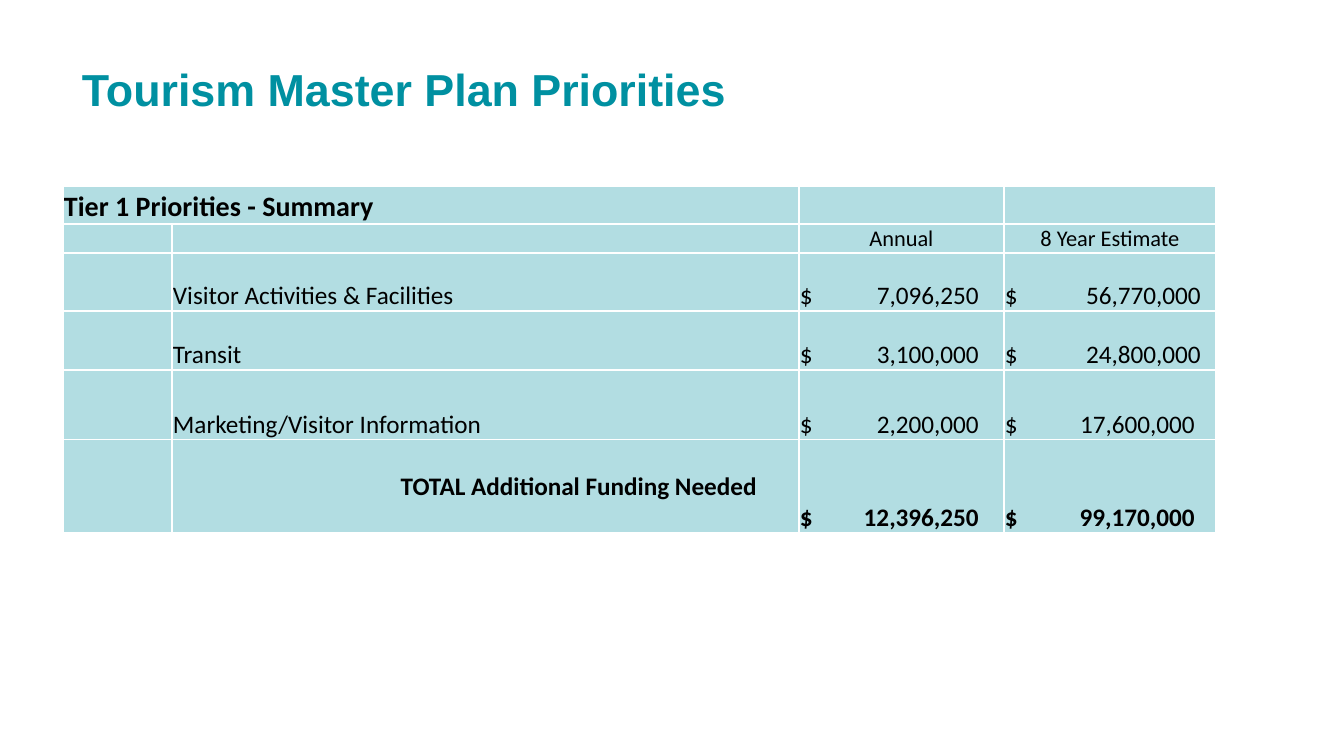
from lxml import etree
from pptx import Presentation
from pptx.dml.color import RGBColor
from pptx.enum.text import MSO_ANCHOR, PP_ALIGN
from pptx.oxml.ns import qn
from pptx.util import Pt

# Content
TITLE = "Tourism Master Plan Priorities"
SUMMARY = "Tier 1 Priorities - Summary"
HEADINGS = ["Annual", "8 Year Estimate"]
# label, annual amount, eight-year amount, right edge of the last amount in px
PRIORITIES = [
    ("Visitor Activities & Facilities", "7,096,250", "56,770,000", 196),
    ("Transit", "3,100,000", "24,800,000", 196),
    ("Marketing/Visitor Information", "2,200,000", "17,600,000", 190),
    ("TOTAL Additional Funding Needed", "12,396,250", "99,170,000", 190),
]

# Layout in px
PX = 9071  # EMU in one px
COLUMNS = [109, 627, 205, 212]
ROWS = [38, 29, 58, 59, 70, 93]
TABLE_LEFT, TABLE_TOP = 63, 186
ANNUAL_EDGE = 179
TOTAL_RIGHT, TOTAL_BOTTOM = 42, 31

TEAL = RGBColor(0x00, 0x90, 0xA1)
BLACK = RGBColor(0x00, 0x00, 0x00)
WHITE = RGBColor(0xFF, 0xFF, 0xFF)
LEFT, CENTER, RIGHT = PP_ALIGN.LEFT, PP_ALIGN.CENTER, PP_ALIGN.RIGHT
BOTTOM, MIDDLE = MSO_ANCHOR.BOTTOM, MSO_ANCHOR.MIDDLE


def write(frame, text, size=18, bold=False, color=BLACK, font="Calibri",
          align=LEFT, tab=None):
    """Put one formatted paragraph in a frame, with an optional right tab."""
    para = frame.paragraphs[0]
    para.alignment = align
    if tab:
        tabs = etree.SubElement(para._p.get_or_add_pPr(), qn("a:tabLst"))
        etree.SubElement(tabs, qn("a:tab"), pos=str(tab * PX), algn="r")
    span = para.add_run()
    span.text = text
    span.font.name = font
    span.font.size = Pt(size)
    span.font.bold = bold
    span.font.color.rgb = color
    return para


def style_cell(cell):
    """Give a cell thin white borders, a tinted fill and narrow margins."""
    cell.vertical_anchor = BOTTOM
    cell.margin_left = cell.margin_right = cell.margin_top = PX
    cell.margin_bottom = 0
    properties = cell._tc.get_or_add_tcPr()
    for side in ("a:lnL", "a:lnR", "a:lnT", "a:lnB"):
        line = etree.SubElement(properties, qn(side), w=str(Pt(1)))
        solid = etree.SubElement(line, qn("a:solidFill"))
        etree.SubElement(solid, qn("a:srgbClr"), val=str(WHITE))
    cell.fill.solid()
    cell.fill.fore_color.rgb = TEAL
    tint = properties.find(qn("a:solidFill")).find(qn("a:srgbClr"))
    etree.SubElement(tint, qn("a:alpha"), val="30000")
    # Small type in empty cells keeps the heading row low
    etree.SubElement(cell.text_frame.paragraphs[0]._p, qn("a:endParaRPr"), sz="1600")


deck = Presentation()
deck.slide_width, deck.slide_height = 1344 * PX, 756 * PX
page = deck.slides.add_slide(deck.slide_layouts[6])

# Title
title_box = page.shapes.add_textbox(72 * PX, 65 * PX, 1159 * PX, 54 * PX)
title_box.text_frame.word_wrap = True
title_box.text_frame.vertical_anchor = MIDDLE
title_para = write(title_box.text_frame, TITLE, size=32, bold=True, color=TEAL,
                   font="Arial")
title_para.line_spacing = 0.9

# Table grid
table = page.shapes.add_table(
    len(ROWS), len(COLUMNS), TABLE_LEFT * PX, TABLE_TOP * PX,
    sum(COLUMNS) * PX, sum(ROWS) * PX).table
table.first_row = table.horz_banding = False
for column, width in zip(table.columns, COLUMNS):
    column.width = width * PX
for row, height in zip(table.rows, ROWS):
    row.height = height * PX
    for cell in row.cells:
        style_cell(cell)

# Heading rows
table.cell(0, 0).merge(table.cell(0, 1))
write(table.cell(0, 0).text_frame, SUMMARY, size=20, bold=True)
for column, heading in enumerate(HEADINGS, start=2):
    write(table.cell(1, column).text_frame, heading, size=16, align=CENTER)

# Priorities, with the total in the last row
for row, (label, annual, estimate, edge) in enumerate(PRIORITIES, start=2):
    is_total = row == len(ROWS) - 1
    label_cell = table.cell(row, 1)
    write(label_cell.text_frame, label, bold=is_total,
          align=RIGHT if is_total else LEFT)
    if is_total:
        label_cell.margin_right = TOTAL_RIGHT * PX
        label_cell.margin_bottom = TOTAL_BOTTOM * PX
    for column, amount, tab in ((2, annual, ANNUAL_EDGE), (3, estimate, edge)):
        write(table.cell(row, column).text_frame, f"$\t{amount}",
              bold=is_total, tab=tab)

deck.save("out.pptx")
